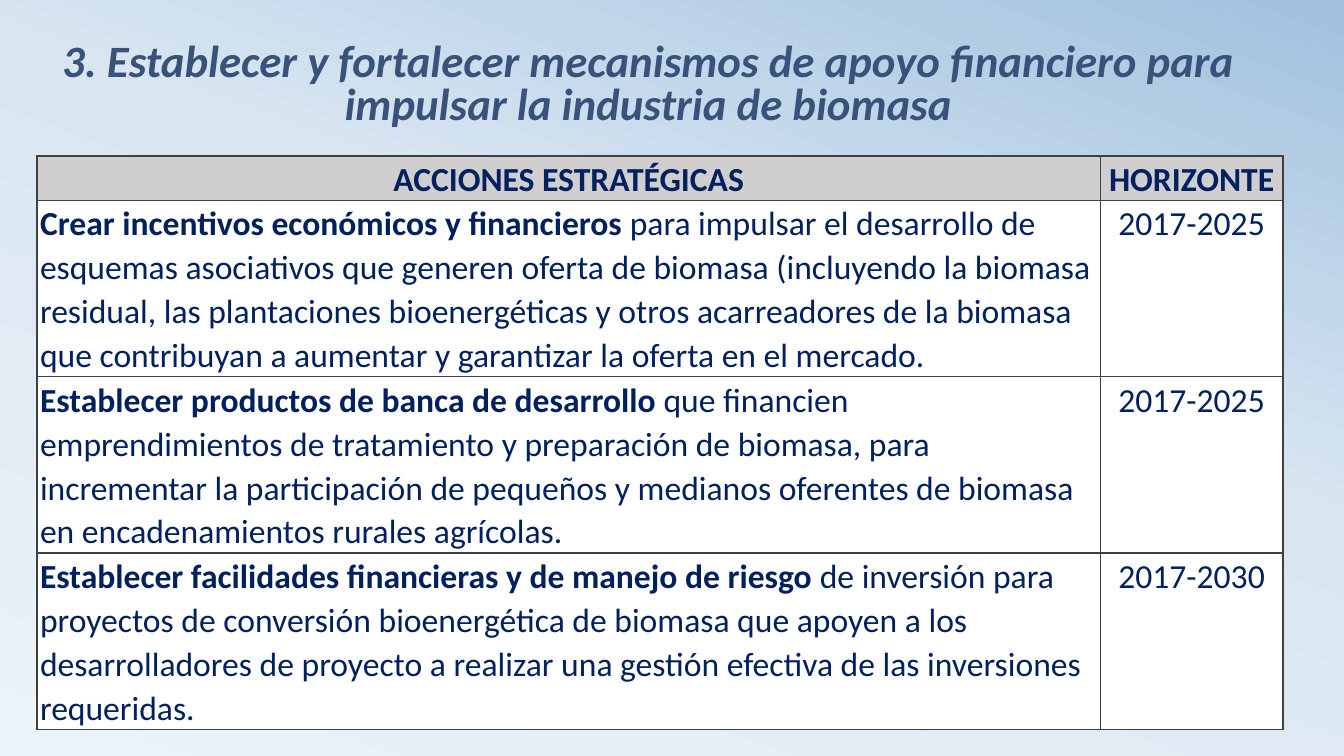
from copy import deepcopy

from lxml.etree import SubElement
from pptx import Presentation
from pptx.dml.color import RGBColor
from pptx.enum.text import MSO_ANCHOR, PP_ALIGN
from pptx.oxml.ns import qn
from pptx.util import Pt

NAVY = RGBColor(0x00, 0x20, 0x60)
SLATE = RGBColor(0x39, 0x52, 0x7B)
GREY = RGBColor(0xD0, 0xCE, 0xCE)
WHITE = RGBColor(0xFF, 0xFF, 0xFF)
BORDER = RGBColor(0x40, 0x40, 0x40)
GRADIENT = [
    (0, RGBColor(0xEC, 0xF3, 0xF8)),
    (0.58, RGBColor(0xD9, 0xE6, 0xF2)),
    (1, RGBColor(0xA1, 0xC1, 0xDE)),
]

TITLE = ("3. Establecer y fortalecer mecanismos de apoyo financiero para "
         "impulsar la industria de biomasa")
HEADERS = ["ACCIONES ESTRATÉGICAS", "HORIZONTE"]
ACTIONS = [
    ("Crear incentivos económicos y financieros ",
     "para impulsar el desarrollo de esquemas asociativos que generen oferta de "
     "biomasa (incluyendo la biomasa residual, las plantaciones bioenergéticas y "
     "otros acarreadores de la biomasa que contribuyan a aumentar y garantizar la "
     "oferta en el mercado.", "2017-2025"),
    ("Establecer productos de banca de desarrollo ",
     "que financien emprendimientos de tratamiento y preparación de biomasa, para "
     "incrementar la participación de pequeños y medianos oferentes de biomasa en "
     "encadenamientos rurales agrícolas.", "2017-2025"),
    ("Establecer facilidades financieras y de manejo de riesgo ",
     "de inversión para proyectos de conversión bioenergética de biomasa que apoyen "
     "a los desarrolladores de proyecto a realizar una gestión efectiva de las "
     "inversiones requeridas.", "2017-2030"),
]


def add_run(p, text, size=24, color=NAVY, bold=False, italic=False):
    r = p.add_run()
    r.text = text
    r.font.name = "Calibri"
    r.font.size = Pt(size)
    r.font.color.rgb = color
    r.font.bold = bold
    r.font.italic = italic


def set_background(s):
    fill = s.background.fill
    fill.gradient()
    fill.gradient_angle = 70
    stops = s.element.find(".//" + qn("a:gsLst"))
    stops.append(deepcopy(stops[0]))
    for stop, (position, color) in zip(fill.gradient_stops, GRADIENT):
        stop.position = position
        stop.color.rgb = color


def add_title(s):
    tf = s.shapes.add_textbox(Pt(26.6), Pt(20.9), Pt(873.4), Pt(74.9)).text_frame
    tf.word_wrap = True
    tf.vertical_anchor = MSO_ANCHOR.BOTTOM
    p = tf.paragraphs[0]
    p.alignment = PP_ALIGN.CENTER
    p.line_spacing = 0.8
    add_run(p, TITLE, size=32, color=SLATE, bold=True, italic=True)


def add_borders(cell):
    tc_pr = cell._tc.get_or_add_tcPr()
    for side in ("a:lnL", "a:lnR", "a:lnT", "a:lnB"):
        ln = SubElement(tc_pr, qn(side), w=str(Pt(1)))
        fill = SubElement(ln, qn("a:solidFill"))
        SubElement(fill, qn("a:srgbClr"), val=str(BORDER))


def fill_cell(cell, runs, color, margin, align):
    add_borders(cell)
    cell.fill.solid()
    cell.fill.fore_color.rgb = color
    cell.margin_left = cell.margin_right = Pt(margin)
    cell.margin_top = Pt(0.7)
    cell.margin_bottom = Pt(0)
    p = cell.text_frame.paragraphs[0]
    p.alignment = align
    p.line_spacing = 1.07
    p.space_after = Pt(8)
    for text, bold in runs:
        add_run(p, text, bold=bold)


def add_actions_table(s):
    frame = s.shapes.add_table(len(ACTIONS) + 1, 2, Pt(26.4), Pt(111.5), Pt(890), Pt(409.5))
    table = frame.table
    for column, width in zip(table.columns, (759.6, 130.4)):
        column.width = Pt(width)
    for i, row in enumerate(table.rows):
        row.height = Pt(126 if i else 31.5)
    for j, (header, margin) in enumerate(zip(HEADERS, (5, 3.6))):
        fill_cell(table.cell(0, j), [(header, True)], GREY, margin, PP_ALIGN.CENTER)
    for i, (lead, detail, horizon) in enumerate(ACTIONS, 1):
        fill_cell(table.cell(i, 0), [(lead, True), (detail, False)], WHITE, 2.2, PP_ALIGN.LEFT)
        fill_cell(table.cell(i, 1), [(horizon, False)], WHITE, 2.2, PP_ALIGN.CENTER)


def main():
    prs = Presentation()
    prs.slide_width = Pt(960)
    prs.slide_height = Pt(540)
    s = prs.slides.add_slide(prs.slide_layouts[6])
    set_background(s)
    add_title(s)
    add_actions_table(s)
    prs.save("out.pptx")


if __name__ == "__main__":
    main()
